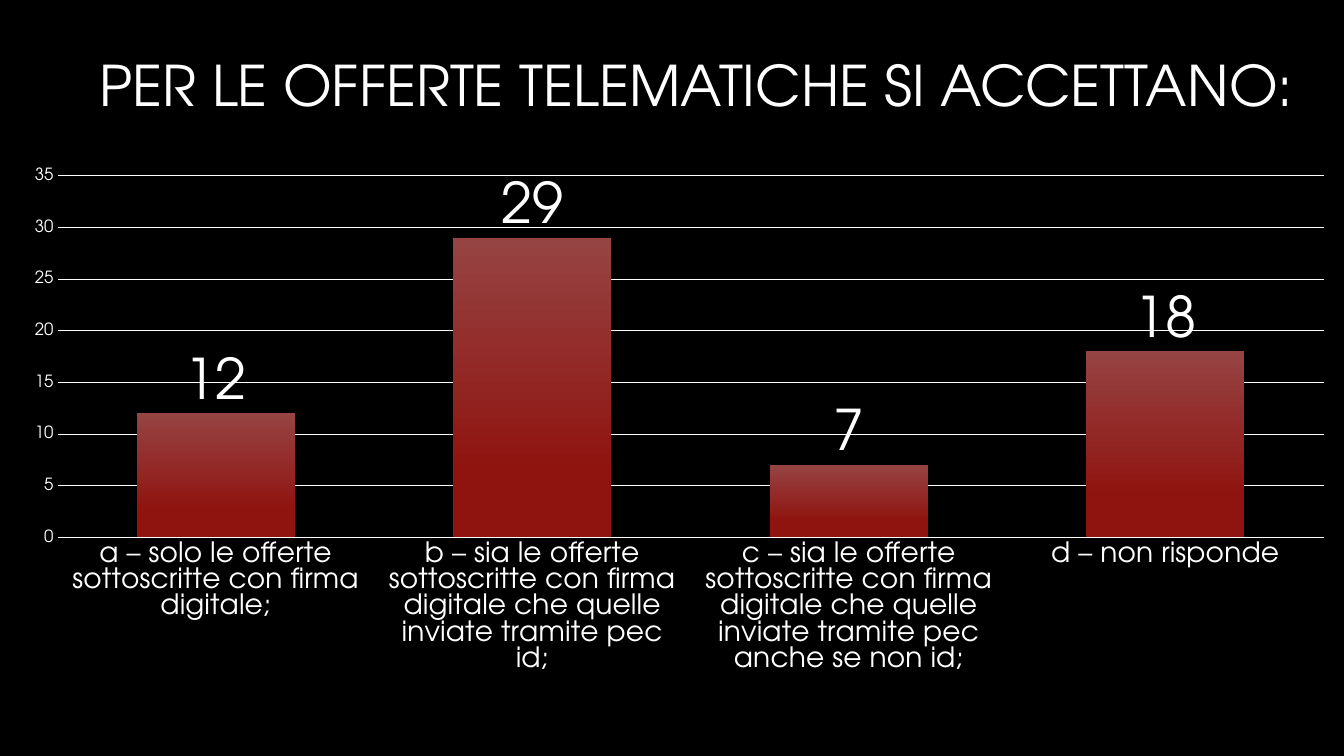
import pptx
import pptx.util
import pptx.chart.data
import pptx.dml.color
import pptx.enum.chart
import pptx.enum.text
import pptx.oxml

Cm = pptx.util.Cm
Pt = pptx.util.Pt
RGB = pptx.dml.color.RGBColor.from_string
enum = pptx.enum.chart

face = "TeX Gyre Adventor"
hues = {"back": "000000", "text": "FFFFFF", "top": "964443", "base": "8F130F"}
votes = {
    "a – solo le offerte sottoscritte con firma digitale;": 12,
    "b – sia le offerte sottoscritte con firma digitale che quelle inviate tramite pec id;": 29,
    "c – sia le offerte sottoscritte con firma digitale che quelle inviate tramite pec anche se non id;": 7,
    "d – non risponde": 18,
}


def style(font, size):
    font.name = face
    font.size = Pt(size)
    font.bold = False
    font.color.rgb = RGB(hues["text"])


deck = pptx.Presentation()
deck.slide_width = Cm(33.87)
deck.slide_height = Cm(19.05)
slide = deck.slides.add_slide(deck.slide_layouts[5])
slide.background.fill.solid()
slide.background.fill.fore_color.rgb = RGB(hues["back"])

title = slide.shapes.title
title.left, title.top = Cm(1.02), Cm(0.43)
title.width, title.height = Cm(31.83), Cm(3.58)
frame = title.text_frame
frame.text = "PER LE OFFERTE TELEMATICHE SI ACCETTANO:"
frame.word_wrap = True
frame.auto_size = pptx.enum.text.MSO_AUTO_SIZE.NONE
frame.vertical_anchor = pptx.enum.text.MSO_ANCHOR.MIDDLE
head = frame.paragraphs[0]
head.alignment = pptx.enum.text.PP_ALIGN.RIGHT
head.line_spacing = 0.9
style(head.runs[0].font, 40)

data = pptx.chart.data.CategoryChartData()
data.categories = list(votes)
data.add_series("Series 1", list(votes.values()))
chart = slide.shapes.add_chart(
    enum.XL_CHART_TYPE.COLUMN_CLUSTERED, 0, Cm(4.01), Cm(33.73), Cm(15.04), data
).chart
chart.has_legend = False
chart.has_title = False
style(chart.font, 10)

for axis, size in ((chart.category_axis, 20), (chart.value_axis, 12)):
    axis.major_tick_mark = enum.XL_TICK_MARK.NONE
    axis.minor_tick_mark = enum.XL_TICK_MARK.NONE
    style(axis.tick_labels.font, size)

line = chart.category_axis.format.line
line.width = Pt(1)
line.color.rgb = RGB(hues["text"])

scale = chart.value_axis
scale.minimum_scale, scale.maximum_scale, scale.major_unit = 0, 35, 5
scale.tick_labels.number_format = "0"
scale.tick_labels.number_format_is_linked = False
scale.format.line.fill.background()
grid = scale.major_gridlines.format.line
grid.width = Pt(0.75)
grid.color.rgb = RGB(hues["text"])

plot = chart.plots[0]
plot.gap_width = 100
plot.overlap = -24
plot.vary_by_categories = False
fill = plot.series[0].format.fill
fill.gradient()
fill.gradient_angle = 270
for stop, hue, place in zip(fill.gradient_stops, ("top", "base"), (0, 0.78)):
    stop.color.rgb = RGB(hues[hue])
    stop.position = place

tags = plot.series[0].data_labels
tags.show_value = True
tags.position = enum.XL_LABEL_POSITION.OUTSIDE_END
tags.number_format = "0"
tags.number_format_is_linked = False
style(tags.font, 40)

area = chart._chartSpace.chart.plotArea
for old in area.findall(pptx.oxml.ns.qn("c:layout")):
    area.remove(old)
sides = {"x": 0.043, "y": 0.028, "w": 0.946, "h": 0.606}
marks = "".join(f'<c:{key}Mode val="edge"/>' for key in "xy")
marks += "".join(f'<c:{key} val="{part}"/>' for key, part in sides.items())
area.insert(0, pptx.oxml.parse_xml(
    f'<c:layout {pptx.oxml.ns.nsdecls("c")}><c:manualLayout>'
    f'<c:layoutTarget val="inner"/>{marks}</c:manualLayout></c:layout>'
))

deck.save("out.pptx")
